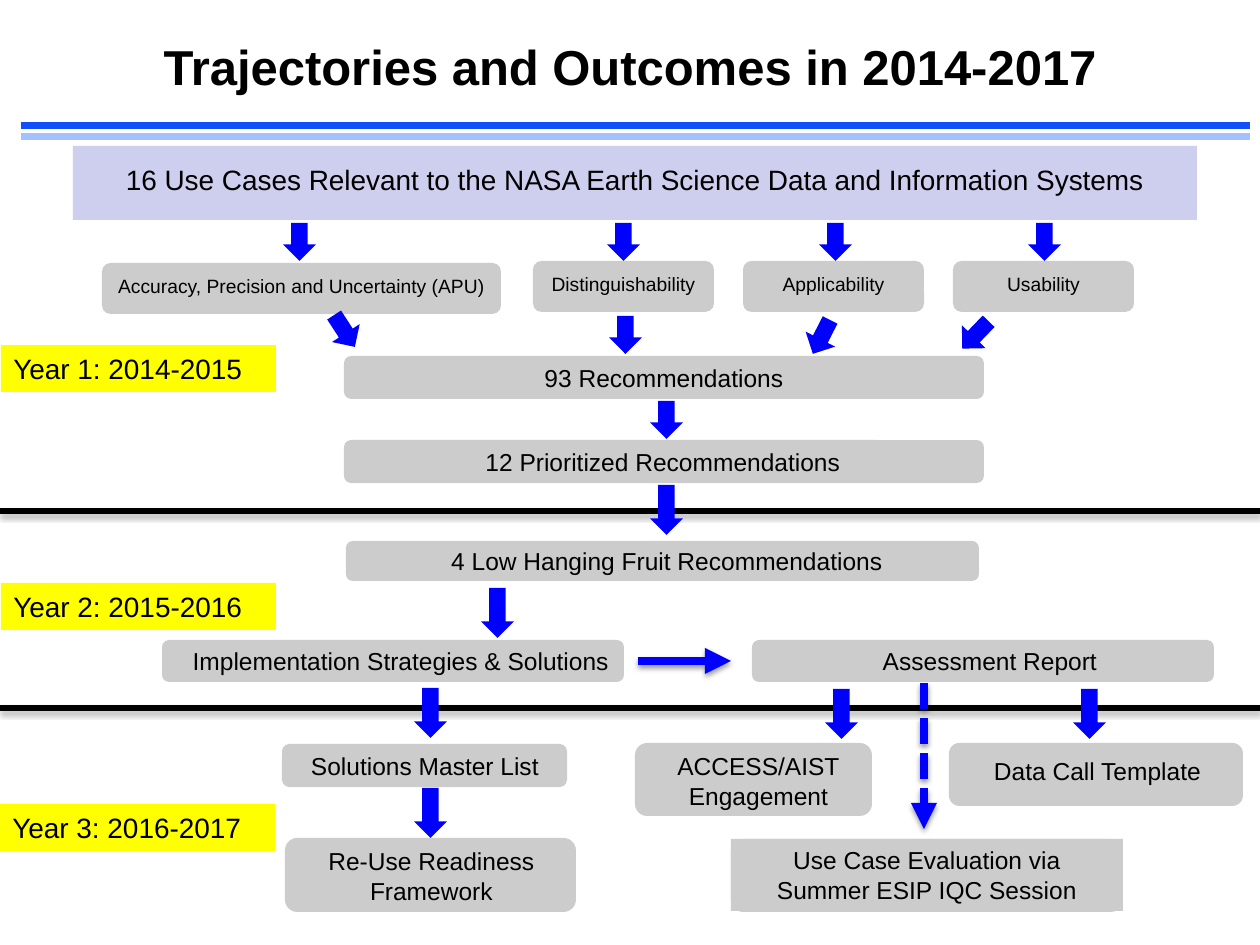
from lxml import etree
from pptx import Presentation
from pptx import util as u
from pptx.dml.color import RGBColor
from pptx.enum import dml, shapes, text
from pptx.oxml import ns

PX = 7257  # EMU in one px, 126 px to the inch
W, H = 1260, 945

BLACK = RGBColor(0x00, 0x00, 0x00)
BLUE = RGBColor(0x00, 0x00, 0xFF)
RULE_DARK = RGBColor(0x11, 0x4F, 0xFB)
RULE_LIGHT = RGBColor(0xA2, 0xC1, 0xFE)
GRAY = RGBColor(0xCC, 0xCC, 0xCC)
LILAC = RGBColor(0xCE, 0xCE, 0xEF)
YELLOW = RGBColor(0xFF, 0xFF, 0x00)

RECT = shapes.MSO_SHAPE.RECTANGLE
ROUND = shapes.MSO_SHAPE.ROUNDED_RECTANGLE
DOWN = shapes.MSO_SHAPE.DOWN_ARROW
CENTER, LEFT = text.PP_ALIGN.CENTER, text.PP_ALIGN.LEFT

prs = Presentation()
prs.slide_width, prs.slide_height = W * PX, H * PX
s = prs.slides.add_slide(prs.slide_layouts[5])


def add_box(at, txt="", kind=None, fill=None, size=14, align=CENTER, rot=0):
    """Add a shape, or a text box when no kind is given."""
    at = [v * PX for v in at]
    if kind is None:
        sp = s.shapes.add_textbox(*at)
    else:
        sp = s.shapes.add_shape(kind, *at)
        sp.shadow.inherit = False
        sp.fill.solid()
        sp.fill.fore_color.rgb = fill
        sp.line.fill.background()
        sp.rotation = rot
    if txt:
        tf = sp.text_frame
        tf.word_wrap = True
        tf.vertical_anchor = text.MSO_ANCHOR.TOP
        tf.text = txt
        for p in tf.paragraphs:
            p.alignment = align
            p.font.name, p.font.size = "Arial", u.Pt(size)
            p.font.color.rgb = BLACK


def add_line(x1, y1, x2, y2, color, width, shadow=0, arrow=False, dash=None):
    """Add a line; shadow is its opacity in percent."""
    ln = s.shapes.add_connector(shapes.MSO_CONNECTOR.STRAIGHT,
                                x1 * PX, y1 * PX, x2 * PX, y2 * PX)
    ln.line.color.rgb = color
    ln.line.width = u.Pt(width)
    if dash:
        ln.line.dash_style = dash
    sp_pr = ln._element.spPr
    if arrow:
        etree.SubElement(sp_pr.find(ns.qn("a:ln")), ns.qn("a:tailEnd"), type="triangle")
    effects = etree.SubElement(sp_pr, ns.qn("a:effectLst"))
    if shadow:
        outer = etree.SubElement(effects, ns.qn("a:outerShdw"), blurRad="39370",
                                 dist="22860", dir="5400000", rotWithShape="0")
        clr = etree.SubElement(outer, ns.qn("a:srgbClr"), val="000000")
        etree.SubElement(clr, ns.qn("a:alpha"), val=str(shadow * 1000))


# Title and the double rule under it
title = s.shapes.title
title.left, title.top, title.width, title.height = 63 * PX, 0, 1134 * PX, 142 * PX
tf = title.text_frame
tf.text = "Trajectories and Outcomes in 2014-2017"
tf.vertical_anchor = text.MSO_ANCHOR.MIDDLE
p = tf.paragraphs[0]
p.alignment, p.line_spacing = CENTER, 0.85
p.font.name, p.font.size, p.font.bold = "Arial", u.Pt(28), True
p.font.color.rgb = BLACK
add_line(21, 126, 1250, 126, RULE_DARK, 4)
add_line(21, 137, 1250, 137, RULE_LIGHT, 4)

# Dividers between the years
for y in (511, 708):
    add_line(0, y, W, y, BLACK, 3, shadow=35)

# Use case banner
add_box((73, 146, 1124, 74), kind=RECT, fill=LILAC)
add_box((93, 156, 1084, 47),
        "16 Use Cases Relevant to the NASA Earth Science Data and Information Systems", size=16)

# Four quality aspects
for x, y, w, label in [
    (102, 263, 399, "Accuracy, Precision and Uncertainty (APU)"),
    (533, 261, 181, "Distinguishability"),
    (743, 261, 181, "Applicability"),
    (953, 261, 181, "Usability"),
]:
    add_box((x, y, w, 51), kind=ROUND, fill=GRAY)
    add_box((x, y + 5, w, 36), label, size=11)

# Steps: gray panel, then its label (left, top, width)
for panel, (x, y, w), label in [
    ((344, 356, 640, 43), (508, 357, 312), "93 Recommendations"),
    ((344, 440, 640, 43), (438, 441, 450), "12 Prioritized Recommendations"),
    ((346, 541, 633, 40), (431, 540, 472), "4 Low Hanging Fruit Recommendations"),
    ((162, 640, 462, 42), (142, 640, 518), "Implementation Strategies & Solutions"),
    ((752, 640, 462, 42), (731, 640, 518), "Assessment Report"),
    ((282, 744, 285, 43), (283, 745, 284), "Solutions Master List"),
    ((285, 838, 291, 74), (260, 840, 343), "Re-Use Readiness\nFramework"),
    ((635, 743, 237, 73), (661, 745, 195), "ACCESS/AIST\nEngagement"),
    ((949, 743, 294, 63), (977, 750, 241), "Data Call Template"),
]:
    add_box(panel, kind=ROUND, fill=GRAY)
    add_box((x, y, w, 43 + 29 * label.count("\n")), label)

# Evaluation session
add_box((731, 839, 392, 73), kind=ROUND, fill=GRAY)
add_box((731, 839, 392, 72), "Use Case Evaluation via Summer ESIP IQC Session",
        kind=RECT, fill=GRAY)

# Year tags
for x, y, label in [(1, 345, "Year 1: 2014-2015"),
                    (1, 583, "Year 2: 2015-2016"),
                    (0, 804, "Year 3: 2016-2017")]:
    add_box((x, y, 275, 47), label, kind=RECT, fill=YELLOW, size=16, align=LEFT)

# Block arrows: left, top, height, rotation
for x, y, h, rot in [
    (283, 223, 38, 0), (607, 223, 38, 0), (819, 223, 38, 0), (1028, 223, 38, 0),
    (328, 312, 38, -33), (609, 316, 38, 0), (805, 318, 38, 27), (959, 316, 38, 44),
    (650, 401, 38, 0), (650, 485, 50, 0), (481, 588, 50, 0),
    (414, 688, 50, 0), (825, 689, 50, 0), (1073, 689, 50, 0), (414, 788, 50, 0),
]:
    add_box((x, y, 33, h), kind=DOWN, fill=BLUE, rot=rot)

# Line arrows from the strategies and from the report
add_line(638, 661, 731, 661, BLUE, 5, shadow=38, arrow=True)
add_line(924, 683, 924, 829, BLUE, 5, shadow=38, arrow=True,
         dash=dml.MSO_LINE.SQUARE_DOT)

prs.save("out.pptx")
